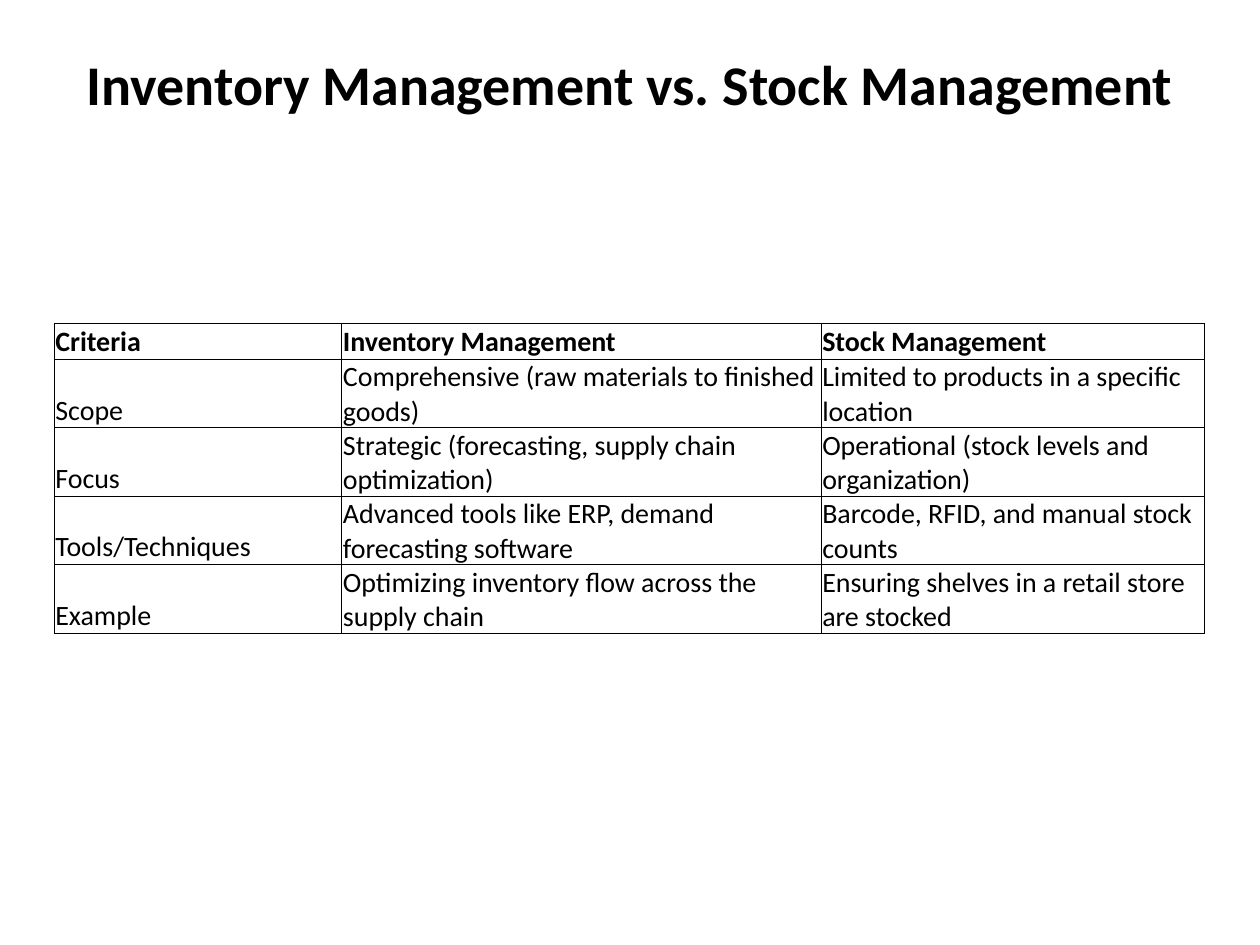
import pptx
import pptx.dml.color
import pptx.enum.text
import pptx.oxml
import pptx.oxml.ns
import pptx.util
from pptx.util import Inches, Pt

BLACK = pptx.dml.color.RGBColor(0, 0, 0)
FONT = "Calibri"
SLIDE_WIDTH, SLIDE_HEIGHT = Inches(10), Inches(7.5)

COLUMN_SHARES = (3, 5, 4)
HEADER_HEIGHT, CRITERION_HEIGHT = Inches(0.28), Inches(0.54)
COMPARISON = (
    ("Criteria", "Inventory Management", "Stock Management"),
    ("Scope", "Comprehensive (raw materials to finished goods)",
     "Limited to products in a specific location"),
    ("Focus", "Strategic (forecasting, supply chain optimization)",
     "Operational (stock levels and organization)"),
    ("Tools/Techniques", "Advanced tools like ERP, demand forecasting software",
     "Barcode, RFID, and manual stock counts"),
    ("Example", "Optimizing inventory flow across the supply chain",
     "Ensuring shelves in a retail store are stocked"),
)


def style_text(paragraph, size, bold):
    for run in paragraph.runs:
        run.font.name = FONT
        run.font.size = Pt(size)
        run.font.bold = bold
        run.font.color.rgb = BLACK


def add_title(slide, text):
    title = slide.shapes.add_textbox(
        int(SLIDE_WIDTH * 0.05), int(SLIDE_HEIGHT * 0.04),
        int(SLIDE_WIDTH * 0.9), Inches(1.25))
    frame = title.text_frame
    frame.word_wrap = True
    frame.vertical_anchor = pptx.enum.text.MSO_ANCHOR.TOP
    frame.margin_top = Inches(0.09)
    frame.text = text
    heading = frame.paragraphs[0]
    heading.alignment = pptx.enum.text.PP_ALIGN.CENTER
    style_text(heading, 32, True)


def add_borders(cell):
    """Draw a thin line on all four sides; must precede the cell's fill."""
    properties = cell._tc.get_or_add_tcPr()
    for side in ("lnL", "lnR", "lnT", "lnB"):
        properties.append(pptx.oxml.parse_xml(
            f'<a:{side} {pptx.oxml.ns.nsdecls("a")} w="{Pt(0.5)}">'
            f'<a:solidFill><a:srgbClr val="{BLACK}"/></a:solidFill>'
            f'</a:{side}>'))


def fill_cell(cell, text, bold):
    add_borders(cell)
    cell.fill.background()
    cell.margin_left = cell.margin_right = cell.margin_top = Inches(0.01)
    cell.margin_bottom = 0
    cell.vertical_anchor = pptx.enum.text.MSO_ANCHOR.BOTTOM
    cell.text = text
    style_text(cell.text_frame.paragraphs[0], 16, bold)


def add_comparison(slide):
    width = int(SLIDE_WIDTH * 0.913)
    height = HEADER_HEIGHT + CRITERION_HEIGHT * (len(COMPARISON) - 1)
    table = slide.shapes.add_table(
        len(COMPARISON), len(COLUMN_SHARES),
        Inches(0.43), Inches(2.57), width, height).table
    table.first_row = table.horz_banding = False

    for column, share in zip(table.columns, COLUMN_SHARES):
        column.width = width * share // sum(COLUMN_SHARES)
    for row_number, (row, texts) in enumerate(zip(table.rows, COMPARISON)):
        is_header = row_number == 0
        row.height = HEADER_HEIGHT if is_header else CRITERION_HEIGHT
        for cell, text in zip(row.cells, texts):
            fill_cell(cell, text, is_header)


def main():
    presentation = pptx.Presentation()
    presentation.slide_width = SLIDE_WIDTH
    presentation.slide_height = SLIDE_HEIGHT
    slide = presentation.slides.add_slide(presentation.slide_layouts[6])
    add_title(slide, "Inventory Management vs. Stock Management")
    add_comparison(slide)
    presentation.save("out.pptx")


if __name__ == "__main__":
    main()
